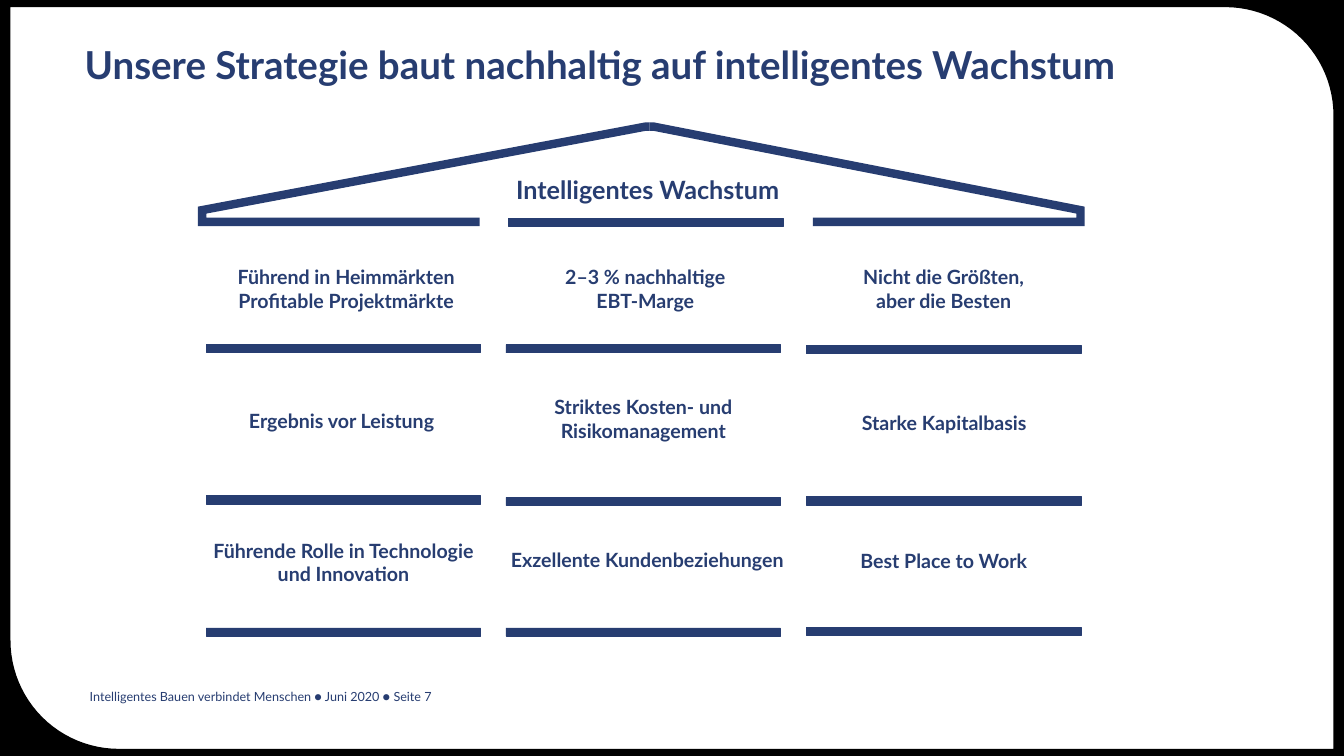
"""Build a strategy slide that shows intelligent growth as a house with nine building blocks."""
from dataclasses import dataclass
from math import cos, radians, sin

from lxml.etree import SubElement
from pptx import Presentation
from pptx.dml.color import RGBColor
from pptx.enum.shapes import MSO_SHAPE as Shape
from pptx.enum.text import MSO_ANCHOR as Anchor, PP_ALIGN as Align
from pptx.oxml.ns import qn
from pptx.util import Cm, Pt


@dataclass(frozen=True)
class Theme:
    navy: RGBColor = RGBColor(0x27, 0x3D, 0x71)
    black: RGBColor = RGBColor(0, 0, 0)
    font: str = "Lato"
    title: int = 55
    roof: int = 36
    block: int = 28
    footer: int = 18


theme = Theme()


def write(shape, text, size, bold=True, align=Align.CENTER, anchor=Anchor.MIDDLE, margins=(0, 0, 0, 0), spacing=None):
    frame = shape.text_frame
    frame.text = text
    frame.word_wrap = True
    frame.vertical_anchor = anchor
    frame.margin_left, frame.margin_top, frame.margin_right, frame.margin_bottom = map(Cm, margins)
    for paragraph in frame.paragraphs:
        paragraph.alignment = align
        paragraph.line_spacing = spacing
        for run in paragraph.runs:
            run.font.name = theme.font
            run.font.size = Pt(size)
            run.font.bold = bold
            run.font.color.rgb = theme.navy


def corner(x, y, radius, start, end):
    angles = [radians(start + (end - start) * step / 24) for step in range(25)]
    return [(Cm(x + radius * cos(angle)), Cm(y + radius * sin(angle))) for angle in angles]


presentation = Presentation()
presentation.slide_width, presentation.slide_height = Cm(67.74), Cm(38.1)
slide = presentation.slides.add_slide(presentation.slide_layouts[5])
shapes = slide.shapes

width, height = presentation.slide_width, presentation.slide_height
left, top, right, bottom, radius = 0.53, 0.36, 67.21, 37.74, 5.46
builder = shapes.build_freeform(0, 0)
builder.add_line_segments([(width, 0), (width, height), (0, height)])
builder.move_to(Cm(left), Cm(top))
builder.add_line_segments(
    corner(left + radius, bottom - radius, radius, 180, 90)
    + [(Cm(right), Cm(bottom))]
    + corner(right - radius, top + radius, radius, 0, -90)
)
border = builder.convert_to_shape()
border.shadow.inherit = False
border.fill.solid()
border.fill.fore_color.rgb = theme.black
border.line.fill.background()

title = shapes.title
title.left, title.top, title.width, title.height = Cm(4.27), Cm(2.44), Cm(59.21), Cm(4.39)
write(title, "Unsere Strategie baut nachhaltig auf intelligentes Wachstum", theme.title,
      align=Align.LEFT, anchor=Anchor.TOP, spacing=0.85)

blocks = [
    ("Führend in Heimmärkten\nProfitable Projektmärkte", 10.69, 11.61, 13.51, 6.4),
    ("2–3 % nachhaltige\nEBT-Marge", 25.7, 11.61, 13.64, 6.4),
    ("Nicht die Größten,\vaber die Besten", 40.64, 11.61, 13.84, 6.4),
    ("Ergebnis vor Leistung", 10.19, 17.86, 14.05, 7.16),
    ("Striktes Kosten- und Risikomanagement", 25.63, 17.91, 13.59, 6.91),
    ("Starke Kapitalbasis", 40.67, 18.08, 13.84, 6.91),
    ("Führende Rolle in Technologie und Innovation", 10.39, 25.53, 13.84, 6.1),
    ("Exzellente Kundenbeziehungen", 25.7, 25.35, 13.84, 6.22),
    ("Best Place to Work", 40.67, 25.45, 13.79, 6.12),
]
for text, *box in blocks:
    write(shapes.add_textbox(*map(Cm, box)), text, theme.block, margins=(0, 0, 0, 0.51))

roof_label = shapes.add_textbox(Cm(25.48), Cm(8.36), Cm(14.33), Cm(1.93))
write(roof_label, "Intelligentes Wachstum", theme.roof, anchor=Anchor.BOTTOM, spacing=0.85)

footer = shapes.add_textbox(Cm(4.27), Cm(34.59), Cm(29.34), Cm(1.04))
write(footer, "Intelligentes Bauen verbindet Menschen ● Juni 2020 ● Seite 7", theme.footer,
      bold=False, align=Align.LEFT, anchor=Anchor.TOP, margins=(0.25, 0.13, 0.25, 0.13))

columns = (10.39, 25.5, 40.64)
row_tops = ((17.35, 17.37, 17.42), (24.99, 25.07, 25.04), (31.65, 31.65, 31.62))
bars = [(25.63, 11)] + [bar for tops in row_tops for bar in zip(columns, tops)]
for bar_left, bar_top in bars:
    bar = shapes.add_shape(Shape.RECTANGLE, Cm(bar_left), Cm(bar_top), Cm(13.84), Cm(0.41))
    bar.shadow.inherit = False
    bar.fill.solid()
    bar.fill.fore_color.rgb = theme.navy
    bar.line.color.rgb = theme.navy
    bar.line.width = Pt(1)

ridge, eaves_top, eaves_bottom = 6.38, 10.59, 11.18
for inner, outer, shoulder in ((24.18, 10.19, 32.54), (40.97, 54.46, 32.94)):
    builder = shapes.build_freeform(Cm(inner), Cm(eaves_bottom))
    points = [(outer, eaves_bottom), (outer, eaves_top), (shoulder, ridge), (32.74, ridge)]
    builder.add_line_segments([(Cm(x), Cm(y)) for x, y in points], close=False)
    roof = builder.convert_to_shape()
    roof.shadow.inherit = False
    roof.fill.background()
    roof.line.color.rgb = theme.navy
    roof.line.width = Pt(12)
    SubElement(roof.element.spPr.find(qn("a:ln")), qn("a:miter"), lim="800000")

presentation.save("out.pptx")
